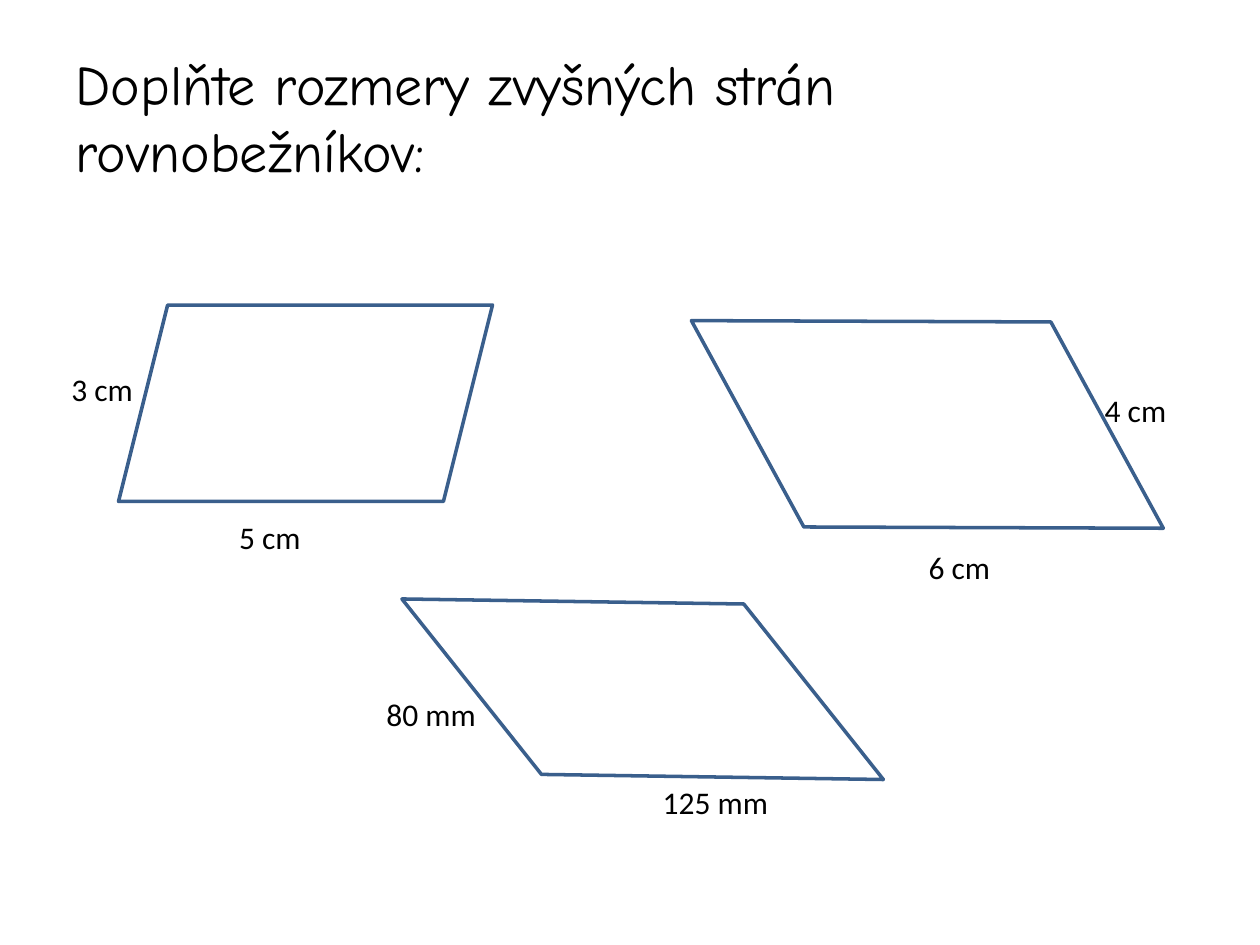
import pptx
import pptx.dml.color
import pptx.enum.shapes
import pptx.enum.text
import pptx.util
from pptx.util import Cm

COLORS = {"text": "000000", "outline": "3A5F8C", "background": "FFFFFF"}


def rgb(name):
    return pptx.dml.color.RGBColor.from_string(COLORS[name])


class Worksheet:
    """Holds the text styles and the slide being filled."""

    styles = {
        "title": {"name": "Comic Neue", "size": pptx.util.Pt(32), "bold": False},
        "label": {"name": "Calibri", "size": pptx.util.Pt(18)},
    }

    def __init__(self, presentation):
        self.slide = presentation.slides.add_slide(presentation.slide_layouts[5])
        fill = self.slide.background.fill
        fill.solid()
        fill.fore_color.rgb = rgb("background")

    def set_text(self, shape, text, style):
        paragraph = shape.text_frame.paragraphs[0]
        paragraph.alignment = pptx.enum.text.PP_ALIGN.LEFT
        run = paragraph.add_run()
        run.text = text
        for attribute, value in self.styles[style].items():
            setattr(run.font, attribute, value)
        run.font.color.rgb = rgb("text")

    def title(self, text, left, top, width, height):
        shape = self.slide.shapes.title
        places = {"left": left, "top": top, "width": width, "height": height}
        for attribute, value in places.items():
            setattr(shape, attribute, Cm(value))
        shape.text_frame.vertical_anchor = pptx.enum.text.MSO_ANCHOR.MIDDLE
        self.set_text(shape, text, "title")

    def parallelogram(self, left, top, width, height, rotation=0, slant=0.25):
        shape = self.slide.shapes.add_shape(
            pptx.enum.shapes.MSO_SHAPE.PARALLELOGRAM,
            Cm(left), Cm(top), Cm(width), Cm(height))
        shape.adjustments[0] = slant
        shape.rotation = rotation
        shape.shadow.inherit = False
        shape.fill.background()
        shape.line.color.rgb = rgb("outline")
        shape.line.width = pptx.util.Pt(2)

    def label(self, text, left, top, width=1.78):
        shape = self.slide.shapes.add_textbox(Cm(left), Cm(top), Cm(width), Cm(1.02))
        shape.text_frame.word_wrap = False
        shape.text_frame.auto_size = pptx.enum.text.MSO_AUTO_SIZE.SHAPE_TO_FIT_TEXT
        self.set_text(shape, text, "label")


def main():
    presentation = pptx.Presentation()
    presentation.slide_width = Cm(25.4)
    presentation.slide_height = Cm(19.05)

    worksheet = Worksheet(presentation)
    worksheet.title("Doplňte rozmery zvyšných strán rovnobežníkov:",
                    1.27, 0.76, 22.86, 3.18)

    worksheet.parallelogram(2.39, 6.15, 7.54, 3.96)
    worksheet.parallelogram(14.58, 5.38, 8.23, 6.35, rotation=241.4, slant=0.55)
    worksheet.parallelogram(8.51, 11.23, 8.89, 5.33, rotation=51.5, slant=0.82)

    worksheet.label("3 cm", 1.19, 7.34)
    worksheet.label("5 cm", 4.57, 10.31)
    worksheet.label("6 cm", 18.47, 10.92)
    worksheet.label("4 cm", 22.02, 7.75)
    worksheet.label("125 mm", 13.11, 15.67, width=2.67)
    worksheet.label("80 mm", 7.54, 13.89, width=2.34)

    presentation.save("out.pptx")


if __name__ == "__main__":
    main()
